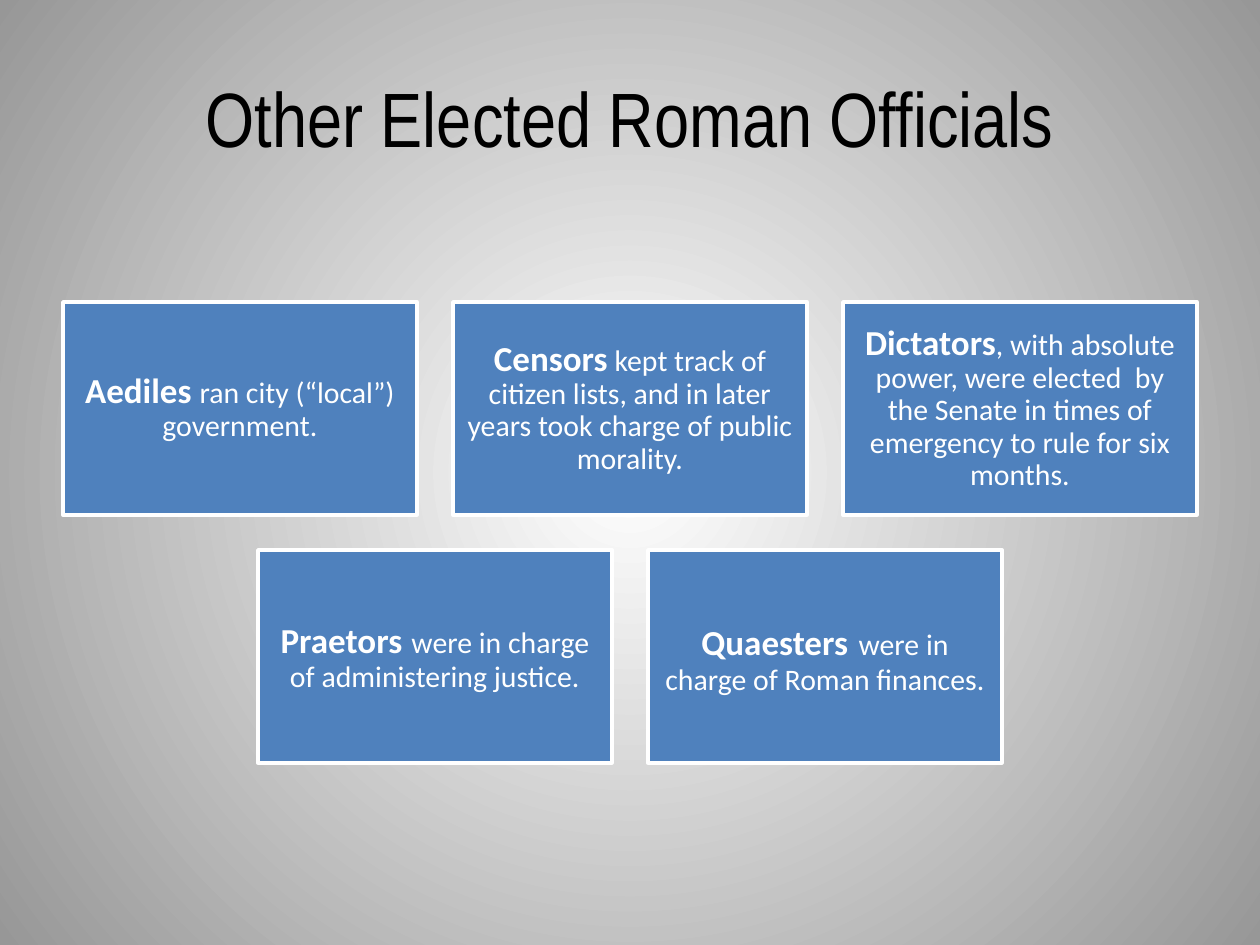
import pptx
import pptx.util
import pptx.oxml
import pptx.oxml.ns
import pptx.dml.color
import pptx.enum.shapes
import pptx.enum.text

RGB = pptx.dml.color.RGBColor
WHITE = RGB(0xFF, 0xFF, 0xFF)
BLACK = RGB(0x00, 0x00, 0x00)
GREY = RGB(0x97, 0x97, 0x97)
BLUE = RGB(0x4F, 0x81, 0xBD)

HEADING = "Other Elected Roman Officials"
OFFICIAL_ROWS = [
    [
        [("Aediles ", 20), ("ran city (“local”) government.", 17)],
        [("Censors", 20),
         (" kept track of citizen lists, and in later years took charge of public morality.", 17)],
        [("Dictators", 20),
         (", with absolute power, were elected  by the Senate in times of emergency "
          "to rule for six months.", 17)],
    ],
    [
        [("Praetors", 20), (" ", 23), ("were in charge of administering justice.", 17)],
        [("Quaesters", 20), (" ", 26), ("were in charge of Roman finances.", 17)],
    ],
]

SLIDE_W, SLIDE_H = 1260, 945
CARD_W, CARD_H = 354, 213
GAP_X, GAP_Y = 36, 35
CARDS_TOP = 302
INSET = 10


def px(length):
    return pptx.util.Emu(round(length * 914400 / 126))


def assign(target, values):
    for name, value in values.items():
        setattr(target, name, value)


def add_run(paragraph, text, size, face, color, bold=False):
    run = paragraph.add_run()
    run.text = text
    assign(run.font, {"size": pptx.util.Pt(size), "name": face, "bold": bold})
    run.font.color.rgb = color


def paint_background(slide):
    fill = slide.background.fill
    fill.gradient()
    for stop, color, position in zip(fill.gradient_stops, (WHITE, GREY), (0, 1)):
        stop.color.rgb = color
        stop.position = position
    linear = next(slide.element.iter(pptx.oxml.ns.qn("a:lin")))
    radial = pptx.oxml.parse_xml(
        f'<a:path {pptx.oxml.ns.nsdecls("a")} path="circle">'
        '<a:fillToRect l="50000" t="50000" r="50000" b="50000"/></a:path>')
    linear.getparent().replace(linear, radial)


def add_card(slide, left, top, official):
    card = slide.shapes.add_shape(
        pptx.enum.shapes.MSO_SHAPE.RECTANGLE, px(left), px(top), px(CARD_W), px(CARD_H))
    card.shadow.inherit = False
    card.fill.solid()
    card.fill.fore_color.rgb = BLUE
    card.line.color.rgb = WHITE
    card.line.width = pptx.util.Pt(2)
    assign(card.text_frame, {
        "word_wrap": True,
        "vertical_anchor": pptx.enum.text.MSO_ANCHOR.MIDDLE,
        **{f"margin_{side}": px(INSET) for side in ("left", "top", "right", "bottom")},
    })
    paragraph = card.text_frame.paragraphs[0]
    assign(paragraph, {"alignment": pptx.enum.text.PP_ALIGN.CENTER, "line_spacing": 0.9})
    for index, (text, size) in enumerate(official):
        add_run(paragraph, text, size, "Calibri", WHITE, bold=index == 0)


def main():
    deck = pptx.Presentation()
    assign(deck, {"slide_width": px(SLIDE_W), "slide_height": px(SLIDE_H)})
    slide = deck.slides.add_slide(deck.slide_layouts.get_by_name("Title Only"))
    paint_background(slide)

    title = slide.shapes.title
    assign(title, {"left": px(63), "top": px(38), "width": px(1134), "height": px(157)})
    title.text_frame.vertical_anchor = pptx.enum.text.MSO_ANCHOR.MIDDLE
    heading = title.text_frame.paragraphs[0]
    heading.alignment = pptx.enum.text.PP_ALIGN.CENTER
    add_run(heading, HEADING, 44, "Arial Narrow", BLACK)

    for row, officials in enumerate(OFFICIAL_ROWS):
        row_width = len(officials) * (CARD_W + GAP_X) - GAP_X
        row_left = (SLIDE_W - row_width) / 2
        top = CARDS_TOP + row * (CARD_H + GAP_Y)
        for column, official in enumerate(officials):
            add_card(slide, row_left + column * (CARD_W + GAP_X), top, official)

    deck.save("out.pptx")


if __name__ == "__main__":
    main()
